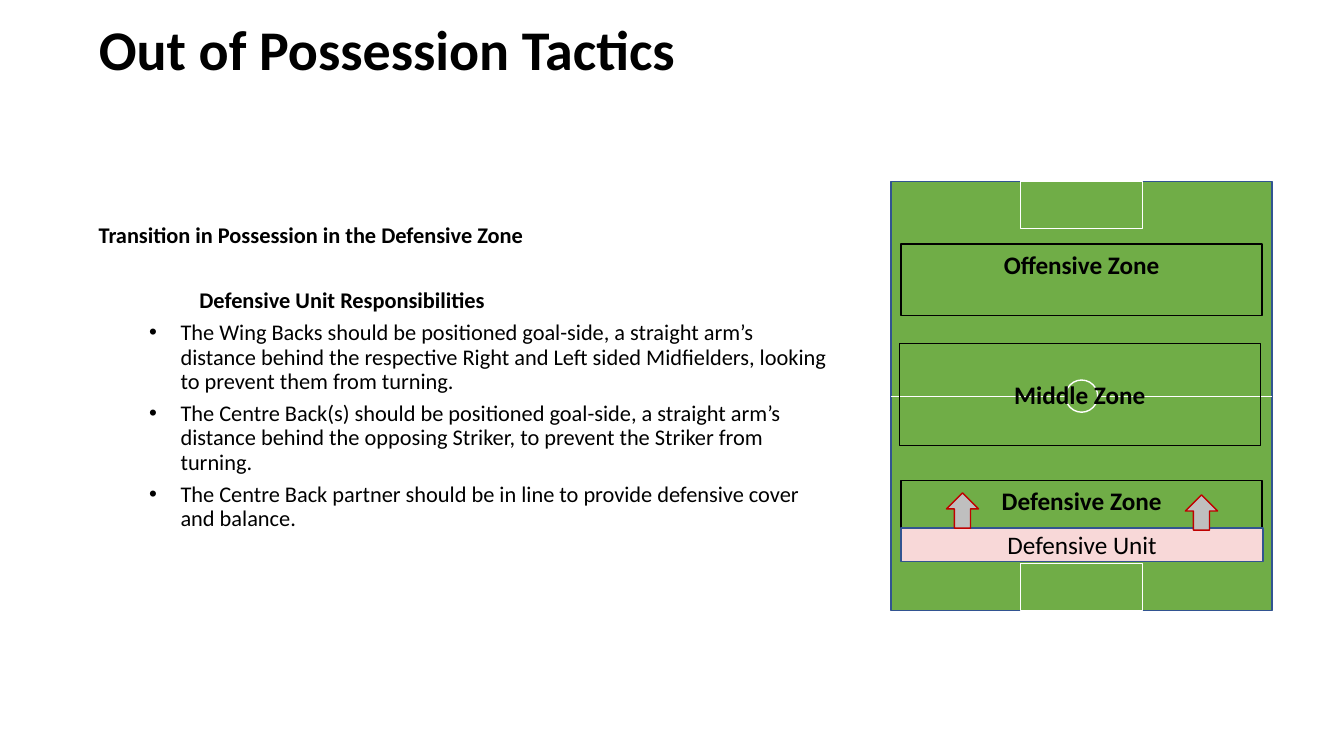
from lxml.etree import SubElement
from pptx import Presentation
from pptx.dml.color import RGBColor
from pptx.enum.shapes import MSO_CONNECTOR, MSO_SHAPE
from pptx.enum.text import MSO_ANCHOR, MSO_AUTO_SIZE, PP_ALIGN
from pptx.oxml.ns import qn
from pptx.util import Pt

FONT = "Calibri"
BLACK = RGBColor(0x00, 0x00, 0x00)
WHITE = RGBColor(0xFF, 0xFF, 0xFF)
GRASS = RGBColor(0x70, 0xAD, 0x47)
NAVY = RGBColor(0x32, 0x54, 0x91)
PINK = RGBColor(0xF8, 0xD8, 0xD8)
GREY = RGBColor(0xBF, 0xBF, 0xBF)
RED = RGBColor(0xC0, 0x00, 0x00)

# Pitch geometry
PITCH_LEFT, PITCH_TOP, PITCH_WIDTH, PITCH_HEIGHT = 636.5, 129.6, 272.2, 306.7
CENTRE_X = PITCH_LEFT + PITCH_WIDTH / 2
CENTRE_Y = PITCH_TOP + PITCH_HEIGHT / 2
BOX_WIDTH, BOX_HEIGHT = 87.1, 33.8
CIRCLE = 23

RESPONSIBILITIES = [
    "The Wing Backs should be positioned goal-side, a straight arm’s distance behind "
    "the respective Right and Left sided Midfielders, looking to prevent them from turning.",
    "The Centre Back(s) should be positioned goal-side, a straight arm’s distance behind "
    "the opposing Striker, to prevent the Striker from turning.",
    "The Centre Back partner should be in line to provide defensive cover and balance.",
]

# Label, left, top, height, vertical anchor
ZONES = [
    ("Offensive Zone", 643.7, 174.2, 51.1, MSO_ANCHOR.TOP),
    ("Middle Zone", 642.4, 245.5, 72.7, MSO_ANCHOR.MIDDLE),
    ("Defensive Zone", 643.7, 343.4, 51.1, MSO_ANCHOR.TOP),
]
ZONE_WIDTH = 257.8


def add_run(paragraph, text, size, bold=False):
    run = paragraph.add_run()
    run.text = text
    run.font.name = FONT
    run.font.size = Pt(size)
    run.font.bold = bold
    run.font.color.rgb = BLACK


def add_figure(slide, kind, left, top, width, height, fill, line):
    figure = slide.shapes.add_shape(kind, Pt(left), Pt(top), Pt(width), Pt(height))
    figure.shadow.inherit = False
    if fill is None:
        figure.fill.background()
    else:
        figure.fill.solid()
        figure.fill.fore_color.rgb = fill
    figure.line.color.rgb = line
    figure.line.width = Pt(1)
    return figure


def add_label(figure, text, anchor, bold):
    frame = figure.text_frame
    frame.word_wrap = True
    frame.vertical_anchor = anchor
    frame.paragraphs[0].alignment = PP_ALIGN.CENTER
    add_run(frame.paragraphs[0], text, 18, bold)


def add_halfway_line(slide, start, end):
    halfway = slide.shapes.add_connector(
        MSO_CONNECTOR.STRAIGHT, Pt(start), Pt(CENTRE_Y), Pt(end), Pt(CENTRE_Y))
    halfway.line.color.rgb = WHITE
    halfway.line.width = Pt(0.5)
    SubElement(halfway._element.spPr, qn("a:effectLst"))
    return halfway


def add_point(paragraph, text, bold=False, indent=0, hanging=0, after=6):
    paragraph.line_spacing = 0.9
    paragraph.space_after = Pt(after)
    properties = paragraph._p.get_or_add_pPr()
    properties.set("marL", str(Pt(indent)))
    properties.set("indent", str(Pt(-hanging)))
    if hanging:
        SubElement(properties, qn("a:buFont"), typeface="Arial")
        SubElement(properties, qn("a:buChar"), char="•")
    add_run(paragraph, text, 16, bold)


def add_title(slide):
    title = slide.shapes.title
    title.left, title.top, title.width, title.height = Pt(63.4), Pt(11.5), Pt(442), Pt(51.1)
    frame = title.text_frame
    frame.auto_size = MSO_AUTO_SIZE.NONE
    frame.vertical_anchor = MSO_ANCHOR.MIDDLE
    frame.paragraphs[0].alignment = PP_ALIGN.LEFT
    frame.paragraphs[0].line_spacing = 0.9
    add_run(frame.paragraphs[0], "Out of Possession Tactics", 40, bold=True)


def add_tactics(slide):
    tactics = slide.shapes.add_textbox(Pt(63.4), Pt(46.1), Pt(535.7), Pt(447.8))
    frame = tactics.text_frame
    frame.word_wrap = True
    frame.vertical_anchor = MSO_ANCHOR.MIDDLE
    add_point(frame.paragraphs[0], "Transition in Possession in the Defensive Zone",
              bold=True, after=29)
    add_point(frame.add_paragraph(), "Defensive Unit Responsibilities", bold=True, indent=72)
    for duty in RESPONSIBILITIES:
        add_point(frame.add_paragraph(), duty, indent=58.5, hanging=22.5)


def add_pitch(slide):
    pitch = add_figure(slide, MSO_SHAPE.RECTANGLE, PITCH_LEFT, PITCH_TOP,
                       PITCH_WIDTH, PITCH_HEIGHT, GRASS, NAVY)
    # Halfway line and centre circle
    left_half = add_halfway_line(slide, PITCH_LEFT, CENTRE_X - CIRCLE / 2)
    left_half.begin_connect(pitch, 1)
    right_half = add_halfway_line(slide, CENTRE_X + CIRCLE / 2, PITCH_LEFT + PITCH_WIDTH)
    right_half.end_connect(pitch, 3)
    add_figure(slide, MSO_SHAPE.OVAL, CENTRE_X - CIRCLE / 2, CENTRE_Y - CIRCLE / 2,
               CIRCLE, CIRCLE, GRASS, WHITE)
    # Penalty boxes
    for top in (PITCH_TOP, PITCH_TOP + PITCH_HEIGHT - BOX_HEIGHT):
        add_figure(slide, MSO_SHAPE.RECTANGLE, CENTRE_X - BOX_WIDTH / 2, top,
                   BOX_WIDTH, BOX_HEIGHT, GRASS, WHITE)


def add_zones(slide):
    for text, left, top, height, anchor in ZONES:
        zone = add_figure(slide, MSO_SHAPE.RECTANGLE, left, top, ZONE_WIDTH, height, None, BLACK)
        add_label(zone, text, anchor, bold=True)


def add_defensive_unit(slide):
    unit = add_figure(slide, MSO_SHAPE.RECTANGLE, 643.7, 377.3, 258.5, 23.8, PINK, NAVY)
    add_label(unit, "Defensive Unit", MSO_ANCHOR.MIDDLE, bold=False)
    for left, top in ((676, 352), (846.7, 353.5)):
        add_figure(slide, MSO_SHAPE.UP_ARROW, left, top, 23, 25.2, GREY, RED)


def main():
    deck = Presentation()
    deck.slide_width, deck.slide_height = Pt(960), Pt(540)
    slide = deck.slides.add_slide(deck.slide_layouts.get_by_name("Title Only"))
    add_title(slide)
    add_tactics(slide)
    add_pitch(slide)
    add_zones(slide)
    add_defensive_unit(slide)
    deck.save("out.pptx")


if __name__ == "__main__":
    main()
